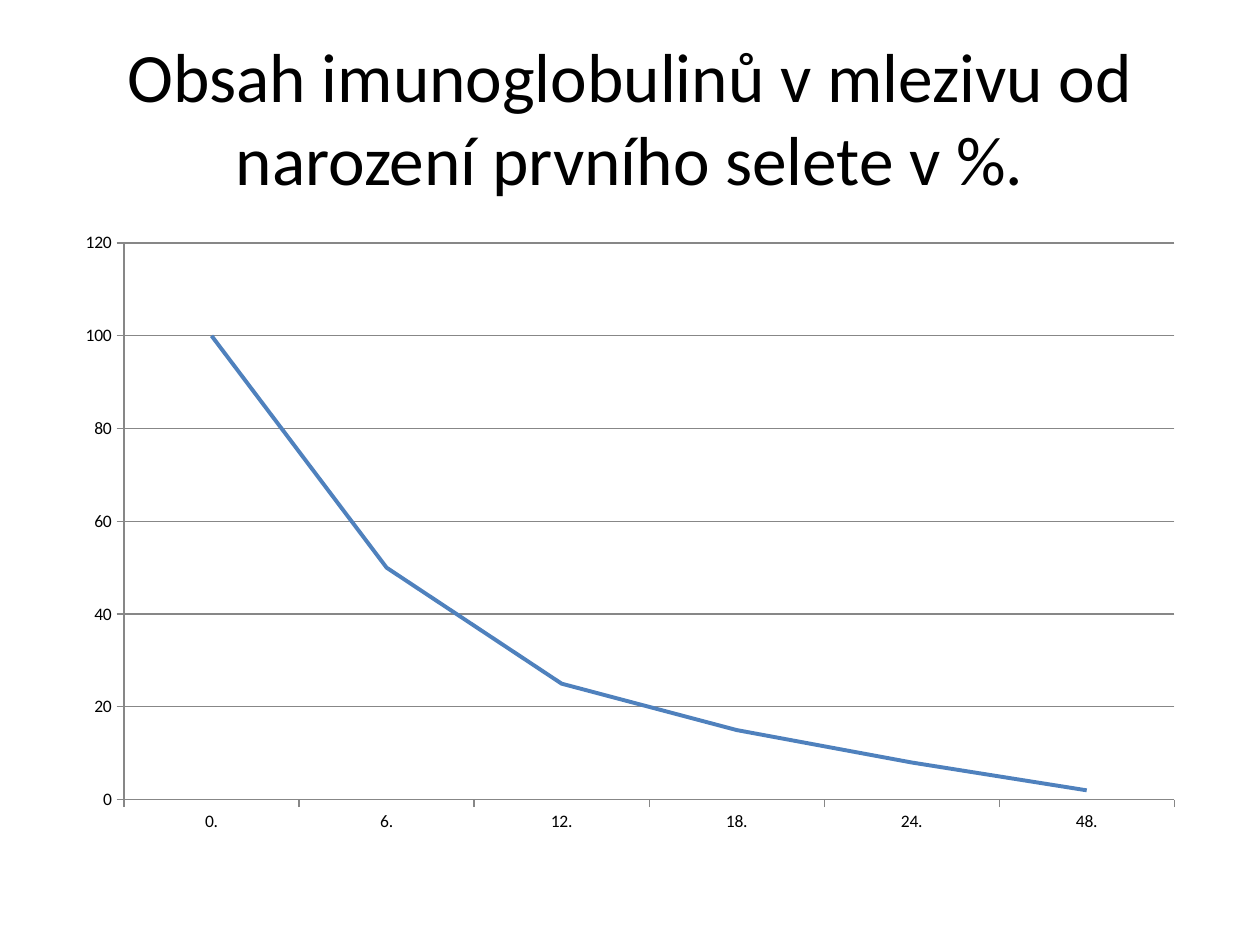
import pptx
import pptx.chart.data
import pptx.dml.color
import pptx.enum.chart
import pptx.enum.text
import pptx.util
from dataclasses import dataclass
from pptx.util import Cm


@dataclass(frozen=True)
class Theme:
    font: str = "Calibri"
    text: str = "000000"
    axis: str = "878787"
    curve: str = "4F81BD"
    title_size: float = 39.6
    label_size: float = 10
    axis_width: float = 0.75
    curve_width: float = 2.25


THEME = Theme()
MARGIN = Cm(1.27)
CONTENT_WIDTH = Cm(22.86)

HOURS = ["0.", "6.", "12.", "18.", "24.", "48."]
IMMUNOGLOBULINS = [100, 50, 25, 15, 8, 2]


def style_font(font, size):
    font.name = THEME.font
    font.size = pptx.util.Pt(size)
    font.bold = False
    font.color.rgb = pptx.dml.color.RGBColor.from_string(THEME.text)


def style_line(line, color, width):
    line.color.rgb = pptx.dml.color.RGBColor.from_string(color)
    line.width = pptx.util.Pt(width)


def add_title(slide, text):
    heading = slide.shapes.add_textbox(MARGIN, Cm(0.76), CONTENT_WIDTH, Cm(3.18)).text_frame
    heading.word_wrap = True
    heading.vertical_anchor = pptx.enum.text.MSO_ANCHOR.MIDDLE
    paragraph = heading.paragraphs[0]
    paragraph.text = text
    paragraph.alignment = pptx.enum.text.PP_ALIGN.CENTER
    style_font(paragraph.font, THEME.title_size)


def add_decline_chart(slide):
    decline = pptx.chart.data.CategoryChartData()
    decline.categories = HOURS
    decline.add_series("Series 1", IMMUNOGLOBULINS)
    chart = slide.shapes.add_chart(
        pptx.enum.chart.XL_CHART_TYPE.LINE,
        MARGIN, Cm(4.45), CONTENT_WIDTH, Cm(12.57), decline,
    ).chart
    chart.has_title = False
    chart.has_legend = False
    style_font(chart.font, THEME.label_size)

    # Axes and gridlines
    for axis in (chart.category_axis, chart.value_axis):
        axis.major_tick_mark = pptx.enum.chart.XL_TICK_MARK.OUTSIDE
        axis.minor_tick_mark = pptx.enum.chart.XL_TICK_MARK.NONE
        style_line(axis.format.line, THEME.axis, THEME.axis_width)
    percent = chart.value_axis
    percent.minimum_scale, percent.maximum_scale, percent.major_unit = 0, 120, 20
    percent.has_major_gridlines = True
    style_line(percent.major_gridlines.format.line, THEME.axis, THEME.axis_width)

    # Curve
    plot = chart.plots[0]
    plot.vary_by_categories = False
    curve = plot.series[0]
    curve.smooth = False
    curve.marker.style = pptx.enum.chart.XL_MARKER_STYLE.NONE
    style_line(curve.format.line, THEME.curve, THEME.curve_width)


def main():
    deck = pptx.Presentation()
    deck.slide_width, deck.slide_height = Cm(25.4), Cm(19.05)
    slide = deck.slides.add_slide(deck.slide_layouts[6])
    add_title(slide, "Obsah imunoglobulinů v mlezivu od narození prvního selete v %.")
    add_decline_chart(slide)
    deck.save("out.pptx")


if __name__ == "__main__":
    main()
